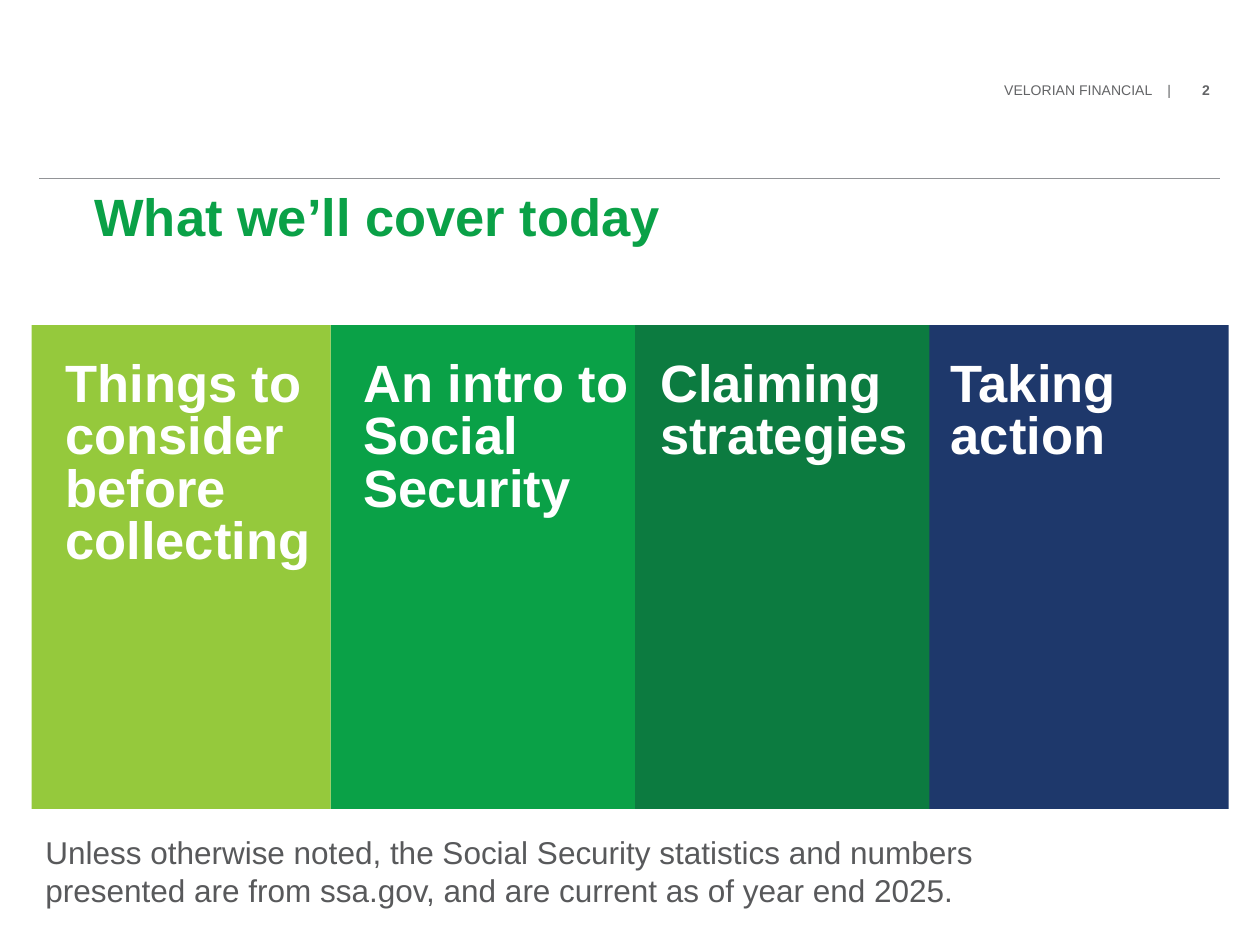
import pptx
import pptx.dml.color
import pptx.enum.shapes
import pptx.enum.text
import pptx.oxml
import pptx.oxml.ns
import pptx.util

WIDTH, HEIGHT = 10, 7.5
WHITE, GREEN, GRAY = "FFFFFF", "0AA147", "58595B"
HEADING = {"name": "Arial", "size": pptx.util.Pt(30), "bold": True}
BODY = {"name": "Arial", "size": pptx.util.Pt(18), "bold": False}
SMALL = {"name": "Arial", "size": pptx.util.Pt(8), "bold": False}

# Heading, fill, and text offset in inches from the column's left edge
TOPICS = [
    ("Things to consider before collecting", "95C93C", 0.27),
    ("An intro to Social Security", GREEN, 0.26),
    ("Claiming strategies", "0C7B40", 0.24),
    ("Taking action", "1E386B", 0.17),
]
DRAW_ORDER = (2, 1, 3, 0)
OVERLAP = 0.04


def color(value):
    return pptx.dml.color.RGBColor.from_string(value)


def inches(*values):
    return [pptx.util.Inches(value) for value in values]


def add_run(paragraph, text, style, text_color, **changes):
    run = paragraph.add_run()
    run.text = text
    for name, value in {**style, **changes}.items():
        setattr(run.font, name, value)
    run.font.color.rgb = color(text_color)


def prepare_frame(shape, anchor="TOP"):
    """Remove insets, wrap the text and return its first paragraph."""
    settings = {
        "margin_left": 0, "margin_top": 0, "margin_right": 0, "margin_bottom": 0,
        "word_wrap": True,
        "auto_size": pptx.enum.text.MSO_AUTO_SIZE.NONE,
        "vertical_anchor": pptx.enum.text.MSO_ANCHOR[anchor],
    }
    for name, value in settings.items():
        setattr(shape.text_frame, name, value)
    paragraph = shape.text_frame.paragraphs[0]
    paragraph.alignment = pptx.enum.text.PP_ALIGN.LEFT
    return paragraph


def add_text_box(slide, box, anchor="TOP"):
    return prepare_frame(slide.shapes.add_textbox(*inches(*box)), anchor)


def add_header(slide, box):
    """Place the page label at the top right of the box and a rule along its bottom."""
    left, top, width, height = box
    label_width = 1.74
    paragraph = add_text_box(slide, (left + width - label_width + 0.03, top, label_width, 0.15))
    properties = paragraph._p.get_or_add_pPr()
    tabs = pptx.oxml.parse_xml(
        f'<a:tabLst {pptx.oxml.ns.nsdecls("a")}>'
        f'<a:tab pos="{pptx.util.Inches(1.57)}" algn="l"/></a:tabLst>')
    properties.append(tabs)
    add_run(paragraph, "VELORIAN FINANCIAL    |\t", SMALL, "636466")
    add_run(paragraph, "2", SMALL, "636466", bold=True)

    bottom = top + height
    rule = slide.shapes.add_connector(
        pptx.enum.shapes.MSO_CONNECTOR.STRAIGHT, *inches(left, bottom, left + width, bottom))
    rule.line.color.rgb = color("929497")
    rule.line.width = pptx.util.Pt(0.5)
    rule._element.spPr.append(
        pptx.oxml.parse_xml(f'<a:effectLst {pptx.oxml.ns.nsdecls("a")}/>'))


def add_title(slide, box):
    title = slide.shapes.title
    title.left, title.top, title.width, title.height = inches(*box)
    paragraph = prepare_frame(title)
    paragraph.line_spacing = pptx.util.Pt(31)
    add_run(paragraph, "What we’ll cover today", HEADING, GREEN)


def add_topics(slide, box):
    """Fill the box with equal columns, the inner ones overlapping the next."""
    left, top, width, height = box
    column = width / len(TOPICS)
    group = slide.shapes.add_group_shape()
    for index in DRAW_ORDER:
        overlap = OVERLAP if 0 < index < len(TOPICS) - 1 else 0
        panel = group.shapes.add_shape(
            pptx.enum.shapes.MSO_SHAPE.RECTANGLE,
            *inches(left + index * column, top, column + overlap, height))
        panel.shadow.inherit = False
        panel.fill.solid()
        panel.fill.fore_color.rgb = color(TOPICS[index][1])
        panel.line.fill.background()
    for index, (heading, _, offset) in enumerate(TOPICS):
        paragraph = add_text_box(
            slide, (left + index * column + offset, top + 0.28, 2.11, 1.33))
        paragraph.line_spacing = pptx.util.Pt(30)
        add_run(paragraph, heading, HEADING, WHITE)


def add_source_note(slide, box):
    paragraph = add_text_box(slide, box, "BOTTOM")
    add_run(paragraph,
            "Unless otherwise noted, the Social Security statistics and numbers "
            "presented are from ssa.gov, and are current as of year end 2025.",
            BODY, GRAY)


def main():
    presentation = pptx.Presentation()
    presentation.slide_width, presentation.slide_height = inches(WIDTH, HEIGHT)
    slide = presentation.slides.add_slide(presentation.slide_layouts[5])
    margin = WIDTH * 0.025
    add_header(slide, (0.31, 0.65, 9.37, 0.77))
    add_title(slide, (WIDTH * 0.075, 1.53, WIDTH * 0.85, HEIGHT * 0.14))
    add_topics(slide, (margin, 2.58, WIDTH - 2 * margin, 3.84))
    add_source_note(slide, (0.36, 6.3, 8.29, 0.91))
    presentation.save("out.pptx")


if __name__ == "__main__":
    main()
